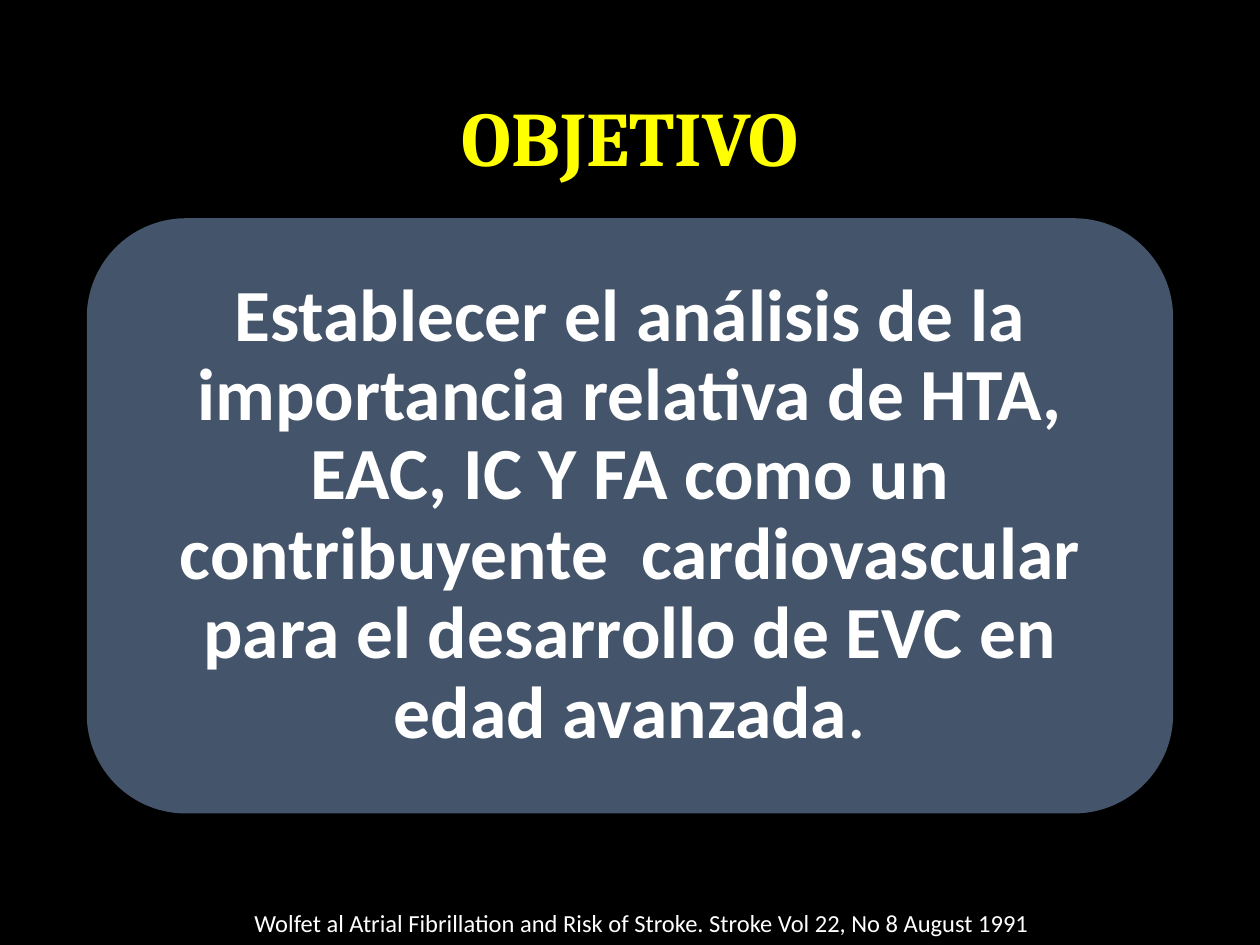
from pptx import Presentation
from pptx.dml.color import RGBColor
from pptx.enum.shapes import MSO_SHAPE
from pptx.enum.text import MSO_ANCHOR, MSO_AUTO_SIZE, PP_ALIGN
from pptx.util import Cm, Pt

COLOURS = {
    "background": "000000",
    "panel": "44546A",
    "title": "FFFF00",
    "text": "FFFFFF",
}
TITLE_FONT = {"name": "Cambria", "size": Pt(44), "bold": True}
OBJECTIVE_FONT = {"name": "Calibri", "size": Pt(42), "bold": True}
CITATION_FONT = {"name": "Calibri", "size": Pt(14), "bold": False}
CENTRED = {"alignment": PP_ALIGN.CENTER, "line_spacing": 0.9}
PANEL_MARGIN = Cm(0.43)
PANEL_FRAME = {
    "word_wrap": True,
    "vertical_anchor": MSO_ANCHOR.MIDDLE,
    "margin_left": PANEL_MARGIN,
    "margin_top": PANEL_MARGIN,
    "margin_right": PANEL_MARGIN,
    "margin_bottom": PANEL_MARGIN,
}
CITATION_FRAME = {"word_wrap": False, "auto_size": MSO_AUTO_SIZE.SHAPE_TO_FIT_TEXT}


def colour(key):
    return RGBColor.from_string(COLOURS[key])


def apply_format(target, values):
    for attribute, value in values.items():
        setattr(target, attribute, value)


def add_words(paragraph, words, font_values, colour_key):
    run = paragraph.add_run()
    run.text = words
    apply_format(run.font, font_values)
    run.font.color.rgb = colour(colour_key)


def place_title(slide, box):
    heading = slide.shapes.title
    apply_format(heading, dict(zip(("left", "top", "width", "height"), box)))
    heading.text_frame.vertical_anchor = MSO_ANCHOR.MIDDLE
    line = heading.text_frame.paragraphs[0]
    apply_format(line, CENTRED)
    add_words(line, "OBJETIVO", TITLE_FONT, "title")


def place_objective(slide, box):
    panel = slide.shapes.add_shape(MSO_SHAPE.ROUNDED_RECTANGLE, *box)
    panel.shadow.inherit = False
    panel.fill.solid()
    panel.fill.fore_color.rgb = colour("panel")
    panel.line.fill.background()
    apply_format(panel.text_frame, PANEL_FRAME)
    objective = panel.text_frame.paragraphs[0]
    apply_format(objective, CENTRED)
    add_words(
        objective,
        "Establecer el análisis de la importancia relativa de HTA, EAC, IC Y FA "
        "como un contribuyente  cardiovascular para el desarrollo de EVC en "
        "edad avanzada",
        OBJECTIVE_FONT,
        "text",
    )
    add_words(objective, ".", {**OBJECTIVE_FONT, "bold": False}, "text")


def place_citation(slide, box):
    citation = slide.shapes.add_textbox(*box)
    apply_format(citation.text_frame, CITATION_FRAME)
    add_words(
        citation.text_frame.paragraphs[0],
        "Wolfet al Atrial Fibrillation and Risk of Stroke. "
        "Stroke Vol 22, No 8 August 1991",
        CITATION_FONT,
        "text",
    )


def main():
    presentation = Presentation()
    presentation.slide_width = Cm(25.4)
    presentation.slide_height = Cm(19.05)
    slide = presentation.slides.add_slide(presentation.slide_layouts[5])
    slide.background.fill.solid()
    slide.background.fill.fore_color.rgb = colour("background")

    margin = Cm(1.75)
    content_width = presentation.slide_width - 2 * margin
    place_objective(slide, (margin, Cm(4.4), content_width, Cm(12)))
    place_title(slide, (margin, Cm(1.02), content_width, Cm(3.68)))
    place_citation(slide, (Cm(4.88), Cm(18.19), Cm(16.38), Cm(0.86)))
    presentation.save("out.pptx")


if __name__ == "__main__":
    main()
